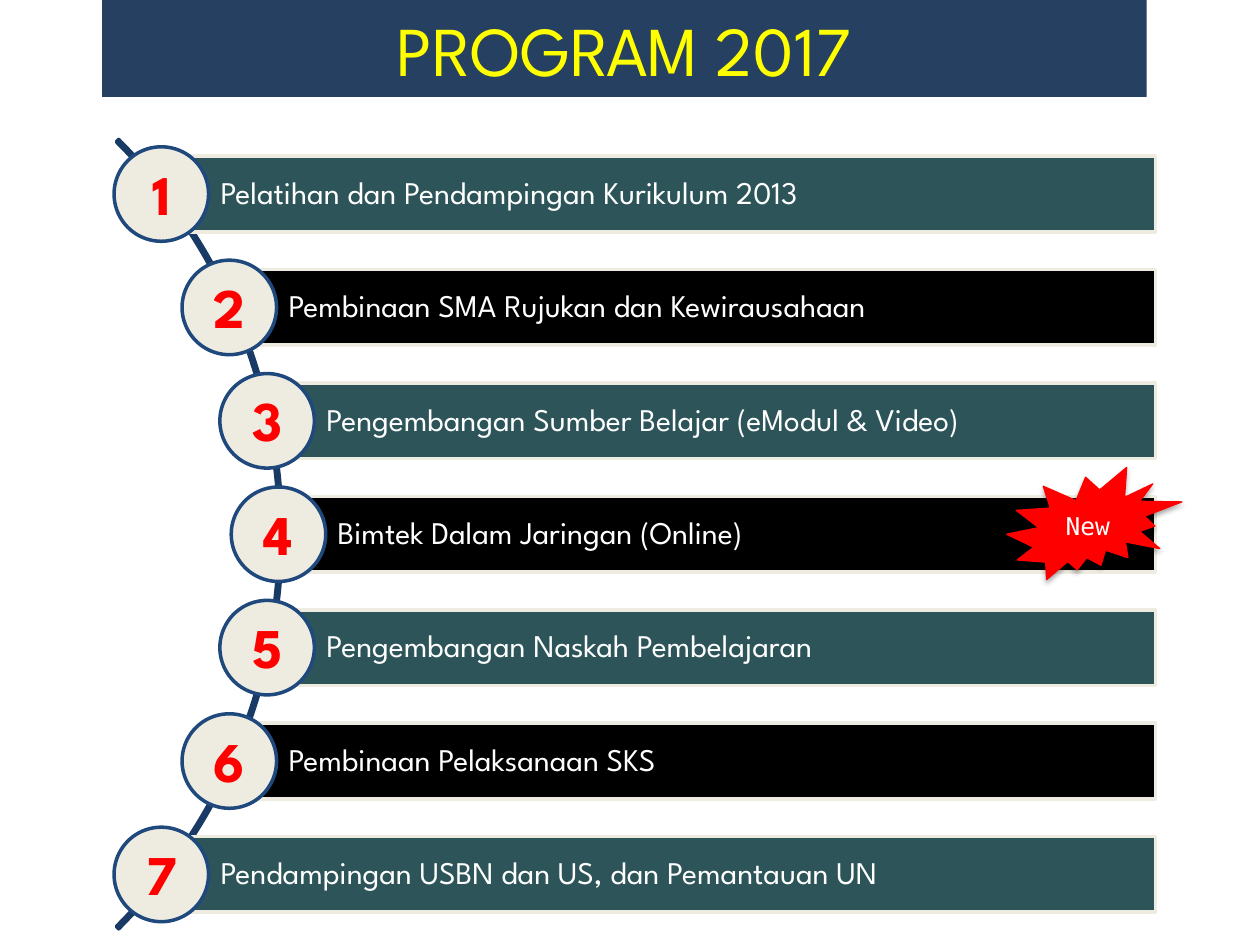
from pptx import Presentation, util as u
from pptx.dml.color import RGBColor
from pptx.enum import shapes, text
from pptx.oxml import parse_xml
from pptx.oxml.ns import nsdecls, qn

COLORS = {"navy": "254061", "arc": "193A64", "ring": "1F497D", "cream": "EEECE1",
          "teal": "2D5559", "black": "000000", "red": "FF0000",
          "yellow": "FFFF00", "white": "FFFFFF"}
PROGRAMS = ["Pelatihan dan Pendampingan Kurikulum 2013",
            "Pembinaan SMA Rujukan dan Kewirausahaan",
            "Pengembangan Sumber Belajar (eModul & Video)",
            "Bimtek Dalam Jaringan (Online)",
            "Pengembangan Naskah Pembelajaran",
            "Pembinaan Pelaksanaan SKS",
            "Pendampingan USBN dan US, dan Pemantauan UN"]
CENTERS = [22.1, 21.2, 18.2, 12.8]
MIDDLE, PITCH, BAR_RIGHT = 42.4, 9, 91.7
BAR_HEIGHT, DISC, ARC = 6, 7.5, 88.6


class ProgramSlide:
    """Draws styled elements on one slide, on a grid of 100 columns and 75 rows."""

    def __init__(self, deck):
        self.page = deck.slides.add_slide(deck.slide_layouts[5])
        self.column = deck.slide_width / 100
        self.row = deck.slide_height / 75
        self.font = "League Spartan"

    def area(self, left, top, width, height):
        return [u.Emu(round(n * size)) for n, size in
                zip((left, top, width, height), (self.column, self.row) * 2)]

    def color(self, name):
        return RGBColor.from_string(COLORS[name])

    def label(self, box, words, size, color, align=text.PP_ALIGN.CENTER, bold=False, font=None):
        frame = box.text_frame
        frame.text = words
        frame.vertical_anchor = text.MSO_ANCHOR.MIDDLE
        para = frame.paragraphs[0]
        para.alignment = align
        span = para.runs[0].font
        span.name, span.size, span.bold = font or self.font, u.Pt(size), bold
        span.color.rgb = self.color(color)
        return frame

    def title(self, words, *area):
        box = self.page.shapes.title
        box.left, box.top, box.width, box.height = self.area(*area)
        box.fill.solid()
        box.fill.fore_color.rgb = self.color("navy")
        self.label(box, words, 40, "yellow")

    def shape(self, kind, area, fill, line, width=2):
        box = self.page.shapes.add_shape(kind, *self.area(*area))
        box.shadow.inherit = False
        if fill:
            box.fill.solid()
            box.fill.fore_color.rgb = self.color(fill)
        else:
            box.fill.background()
        box.line.color.rgb = self.color(line)
        box.line.width = u.Pt(width)
        return box

    def arc(self):
        area = (-66.2, MIDDLE - ARC / 2, ARC, ARC)
        box = self.shape(shapes.MSO_SHAPE.BLOCK_ARC, area, None, "arc")
        for index, value in enumerate((189, 27, 0.003)):
            box.adjustments[index] = value

    def bar(self, words, center, middle, fill):
        area = (center, middle - BAR_HEIGHT / 2, BAR_RIGHT - center, BAR_HEIGHT)
        box = self.shape(shapes.MSO_SHAPE.RECTANGLE, area, fill, "cream")
        frame = self.label(box, words, 18, "white", text.PP_ALIGN.LEFT)
        frame.margin_left, frame.margin_right = u.Inches(0.47), u.Inches(0.05)
        frame.paragraphs[0].line_spacing = 0.9

    def disc(self, number, center, middle):
        area = (center - DISC / 2, middle - DISC / 2, DISC, DISC)
        self.shape(shapes.MSO_SHAPE.OVAL, area, "cream", "ring")
        box = self.page.shapes.add_textbox(
            *self.area(center - 2.25, middle - 3.3, 4.5, 6.4))
        self.label(box, str(number), 32, "red", bold=True).word_wrap = False

    def seal(self, words, *area):
        box = self.shape(shapes.MSO_SHAPE.EXPLOSION2, area, "red", "red", 0.75)
        self.label(box, words, 14, "white", font="DejaVu Sans Mono")
        effects = box.element.spPr.find(qn("a:effectLst"))
        effects.append(parse_xml(
            f'<a:outerShdw {nsdecls("a")} blurRad="{u.Pt(3.1)}" dist="{u.Pt(1.8)}" '
            'dir="5400000" rotWithShape="0"><a:srgbClr val="000000">'
            '<a:alpha val="35000"/></a:srgbClr></a:outerShdw>'))


def main():
    deck = Presentation()
    deck.slide_width, deck.slide_height = u.Inches(10), u.Inches(7.5)
    slide = ProgramSlide(deck)
    slide.title("PROGRAM 2017", 8.1, 0, 82.9, 7.7)
    slide.arc()
    for index, words in enumerate(PROGRAMS):
        offset = index - len(PROGRAMS) // 2
        center, middle = CENTERS[abs(offset)], MIDDLE + offset * PITCH
        slide.bar(words, center, middle, "black" if index % 2 else "teal")
        slide.disc(index + 1, center, middle)
    slide.seal("New", 79.9, 37.1, 13.9, 8.9)
    deck.save("out.pptx")


if __name__ == "__main__":
    main()
